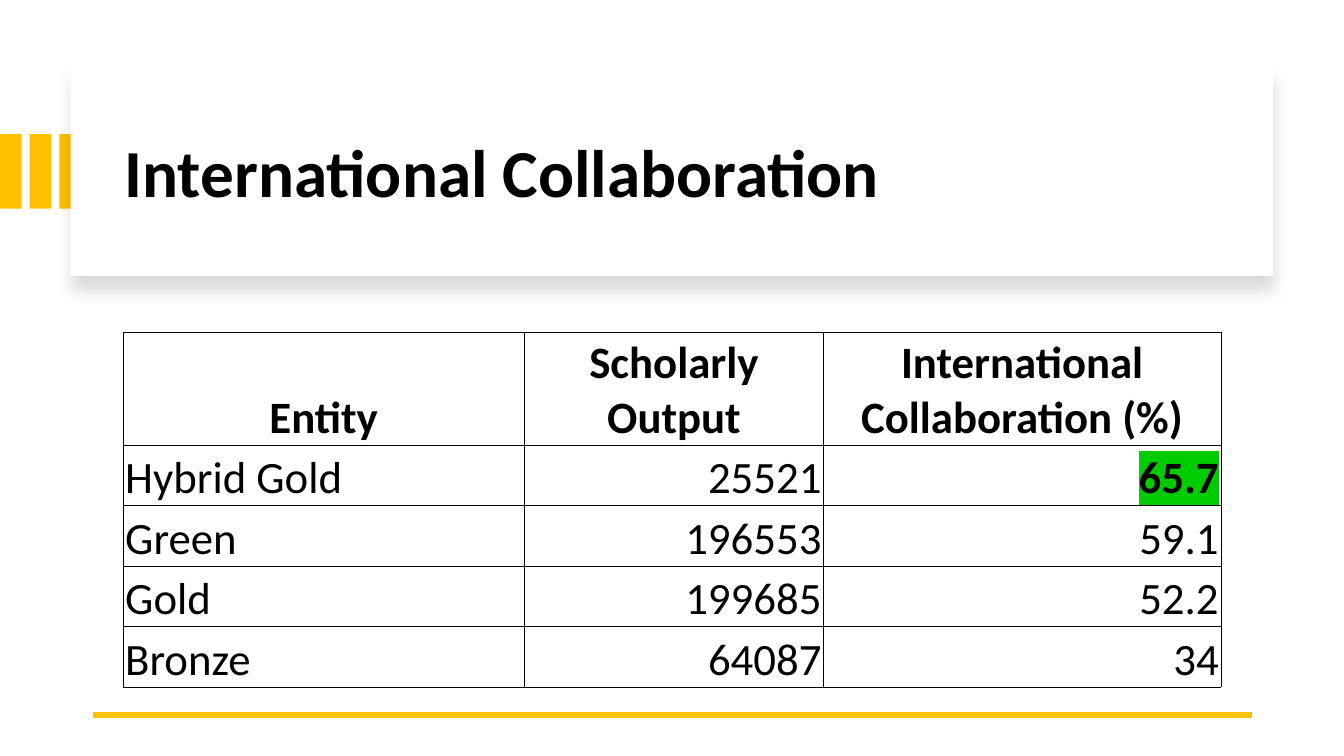
import dataclasses

import lxml.etree
import pptx
import pptx.dml.color
import pptx.enum.shapes
import pptx.enum.text
import pptx.oxml
import pptx.oxml.ns
import pptx.util

Pt = pptx.util.Pt
qn = pptx.oxml.ns.qn
ALIGN = pptx.enum.text.PP_ALIGN
ANCHOR = pptx.enum.text.MSO_ANCHOR


@dataclasses.dataclass(frozen=True)
class Theme:
    gold: str = "FFC000"
    paper: str = "FFFFFF"
    ink: str = "000000"
    mark: str = "00CC00"
    font: str = "Calibri"
    title: int = 48
    body: int = 32


THEME = Theme()
COLS = (286.6, 213.8, 283.7)
ROWS = (80.6, 43.2, 43.2, 43.2, 43.2)
DATA = (
    ("Entity", "Scholarly Output", "International Collaboration (%)"),
    ("Hybrid Gold", "25521", "65.7"),
    ("Green", "196553", "59.1"),
    ("Gold", "199685", "52.2"),
    ("Bronze", "64087", "34"),
)
BEST = (1, 2)


def rgb(code):
    return pptx.dml.color.RGBColor.from_string(code)


def add_xml(code):
    space = pptx.oxml.ns.nsdecls("a")
    return pptx.oxml.parse_xml(code.replace(">", f" {space}>", 1))


def style(para, size, bold):
    font = para.runs[0].font
    font.name = THEME.font
    font.size = Pt(size)
    font.bold = bold
    font.color.rgb = rgb(THEME.ink)


def add_box(slide, left, top, width, height, color):
    kind = pptx.enum.shapes.MSO_SHAPE.RECTANGLE
    box = slide.shapes.add_shape(kind, Pt(left), Pt(top), Pt(width), Pt(height))
    box.shadow.inherit = False
    box.fill.solid()
    box.fill.fore_color.rgb = rgb(color)
    box.line.fill.background()
    return box


def add_shade(box):
    # Soft shadow falling straight down
    glow = box._element.spPr.find(qn("a:effectLst"))
    glow.append(add_xml(
        f'<a:outerShdw blurRad="{Pt(11)}" dist="{Pt(10)}" dir="5400000" '
        f'algn="t" rotWithShape="0"><a:srgbClr val="{THEME.ink}">'
        '<a:alpha val="15000"/></a:srgbClr></a:outerShdw>'))


def add_title(slide, text):
    box = slide.shapes.add_textbox(Pt(82), Pt(64), Pt(801.4), Pt(122.4))
    frame = box.text_frame
    frame.word_wrap = True
    frame.vertical_anchor = ANCHOR.MIDDLE
    frame.text = text
    para = frame.paragraphs[0]
    para.line_spacing = 0.9
    style(para, THEME.title, True)


def add_rule(slide, left, right, top):
    kind = pptx.enum.shapes.MSO_CONNECTOR.STRAIGHT
    rule = slide.shapes.add_connector(kind, Pt(right), Pt(top), Pt(left), Pt(top))
    rule.line.color.rgb = rgb(THEME.gold)
    rule.line.width = Pt(4.5)
    lxml.etree.SubElement(rule._element.spPr, qn("a:effectLst"))


def add_edges(cell):
    props = cell._tc.get_or_add_tcPr()
    for spot, side in enumerate("LRTB"):
        props.insert(spot, add_xml(
            f'<a:ln{side} w="{Pt(0.5)}"><a:solidFill>'
            f'<a:srgbClr val="{THEME.ink}"/></a:solidFill></a:ln{side}>'))


def add_mark(run):
    # Highlight stands just before the font in the run properties
    latin = run._r.rPr.find(qn("a:latin"))
    latin.addprevious(add_xml(
        f'<a:highlight><a:srgbClr val="{THEME.mark}"/></a:highlight>'))


def fill_cell(cell, text, align, bold):
    cell.text_frame.text = text
    cell.vertical_anchor = ANCHOR.BOTTOM
    cell.margin_left = cell.margin_right = cell.margin_top = Pt(1.5)
    cell.margin_bottom = Pt(0)
    cell.fill.background()
    para = cell.text_frame.paragraphs[0]
    para.alignment = align
    style(para, THEME.body, bold)
    add_edges(cell)


def add_grid(slide, left, top):
    frame = slide.shapes.add_table(
        len(ROWS), len(COLS), Pt(left), Pt(top), Pt(sum(COLS)), Pt(sum(ROWS)))
    table = frame.table
    table.first_row = table.horz_banding = False
    for col, width in zip(table.columns, COLS):
        col.width = Pt(width)
    for row, height in zip(table.rows, ROWS):
        row.height = Pt(height)
    for y, line in enumerate(DATA):
        for x, text in enumerate(line):
            side = ALIGN.RIGHT if x else ALIGN.LEFT
            align = side if y else ALIGN.CENTER
            fill_cell(table.cell(y, x), text, align, y == 0 or (y, x) == BEST)
    best = table.cell(*BEST).text_frame.paragraphs[0]
    add_mark(best.runs[0])


def main():
    deck = pptx.Presentation()
    deck.slide_width, deck.slide_height = Pt(960), Pt(540)
    slide = deck.slides.add_slide(deck.slide_layouts[6])

    # Gold bars at the left edge
    for step in range(3):
        add_box(slide, step * 21.2, 95.8, 15.4, 53.3, THEME.gold)

    # Title card
    card = add_box(slide, 50.4, 48.2, 859, 149, THEME.paper)
    add_shade(card)
    add_title(slide, "International Collaboration")

    # Bottom rule and table
    add_rule(slide, 66.2, 894.2, 510.5)
    add_grid(slide, 88, 237.4)

    deck.save("out.pptx")


if __name__ == "__main__":
    main()
